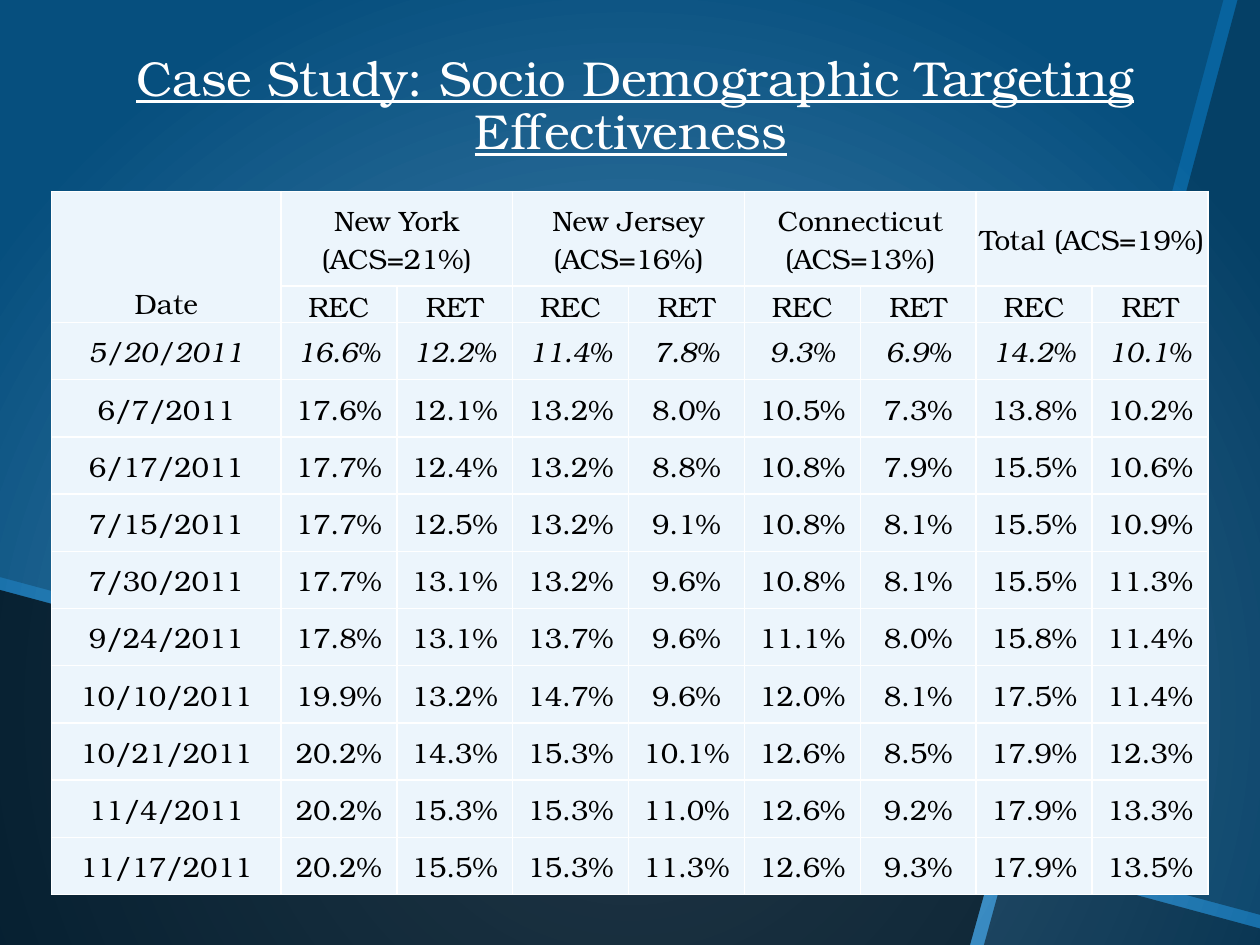
import math
from dataclasses import dataclass

import pptx
import pptx.dml.color
import pptx.enum.text
import pptx.oxml
import pptx.oxml.ns
import pptx.util

Inches = pptx.util.Inches
ALIGN = pptx.enum.text.PP_ALIGN
ANCHOR = pptx.enum.text.MSO_ANCHOR
NAMESPACE = pptx.oxml.ns.nsdecls("a")
FONT = "TeX Gyre Bonum"
COLORS = {
    "glow": "70B6E8",
    "blue": "08639E",
    "shade": "000000",
    "title": "FFFFFF",
    "text": "000000",
    "cell": "ECF5FC",
    "border": "FFFFFF",
}
TILT = 15


@dataclass
class Panel:
    center: tuple[float, float]
    opacity: int
    points: list[tuple[float, float]]


@dataclass
class TitleLine:
    text: str
    left: float
    top: float
    width: float


PANELS = [
    Panel((4.28, 2.14), 20, [(0, 0), (9.71, 0), (7.94, 6.61), (7.9, 6.67), (7.83, 6.68), (0, 4.58)]),
    Panel((3.6, 7.06), 70, [(0, 4.68), (7.8, 6.78), (7.86, 6.83), (7.87, 6.89), (7.7, 7.5), (0, 7.5)]),
    Panel((8.92, 7.44), 50, [(8.04, 6.85), (8.08, 6.85), (10, 7.37), (10, 7.5), (7.81, 7.5), (7.97, 6.92), (8, 6.87)]),
    Panel((9.92, 3.6), 35, [(9.82, 0), (10, 0), (10, 7.26), (8.1, 6.75), (8.05, 6.71), (8.04, 6.64)]),
]
TITLE_LINES = [
    TitleLine("Case Study: Socio Demographic Targeting", 0.33, 0.33, 9.42),
    TitleLine("Effectiveness", 0.38, 0.75, 9.25),
]
REGIONS = ["New York (ACS=21%)", "New Jersey (ACS=16%)", "Connecticut (ACS=13%)", "Total (ACS=19%)"]
RATES = [
    ("5/20/2011", 16.6, 12.2, 11.4, 7.8, 9.3, 6.9, 14.2, 10.1),
    ("6/7/2011", 17.6, 12.1, 13.2, 8.0, 10.5, 7.3, 13.8, 10.2),
    ("6/17/2011", 17.7, 12.4, 13.2, 8.8, 10.8, 7.9, 15.5, 10.6),
    ("7/15/2011", 17.7, 12.5, 13.2, 9.1, 10.8, 8.1, 15.5, 10.9),
    ("7/30/2011", 17.7, 13.1, 13.2, 9.6, 10.8, 8.1, 15.5, 11.3),
    ("9/24/2011", 17.8, 13.1, 13.7, 9.6, 11.1, 8.0, 15.8, 11.4),
    ("10/10/2011", 19.9, 13.2, 14.7, 9.6, 12.0, 8.1, 17.5, 11.4),
    ("10/21/2011", 20.2, 14.3, 15.3, 10.1, 12.6, 8.5, 17.9, 12.3),
    ("11/4/2011", 20.2, 15.3, 15.3, 11.0, 12.6, 9.2, 17.9, 13.3),
    ("11/17/2011", 20.2, 15.5, 15.3, 11.3, 12.6, 9.3, 17.9, 13.5),
]


def rgb(name: str) -> pptx.dml.color.RGBColor:
    return pptx.dml.color.RGBColor.from_string(COLORS[name])


def write_text(frame, text: str, *, size: float, color: str, italic: bool = False, underline: bool = False) -> None:
    paragraph = frame.paragraphs[0]
    paragraph.alignment = ALIGN.CENTER
    run = paragraph.add_run()
    run.text = text
    run.font.name = FONT
    run.font.size = pptx.util.Pt(size)
    run.font.color.rgb = rgb(color)
    run.font.bold = False
    run.font.italic = italic
    run.font.underline = underline


def paint_background(slide) -> None:
    fill = slide.background.fill
    fill.gradient()
    for stop, name, position in zip(fill.gradient_stops, ("glow", "blue"), (0, 1)):
        stop.color.rgb = rgb(name)
        stop.position = position
    line = slide.element.find(".//" + pptx.oxml.ns.qn("a:lin"))
    line.getparent().replace(line, pptx.oxml.parse_xml(
        f'<a:path {NAMESPACE} path="circle"><a:fillToRect l="50000" t="50000" r="50000" b="0"/></a:path>'))


def draw_panel(slide, panel: Panel) -> None:
    cosine, sine = math.cos(math.radians(TILT)), math.sin(math.radians(TILT))
    center_x, center_y = panel.center
    upright = []
    for x, y in panel.points:
        across, down = x - center_x, y - center_y
        upright.append((Inches(center_x + across * cosine + down * sine),
                        Inches(center_y - across * sine + down * cosine)))
    builder = slide.shapes.build_freeform(*upright[0])
    builder.add_line_segments(upright[1:], close=True)
    shape = builder.convert_to_shape()
    shape.rotation = TILT
    shape.shadow.inherit = False
    shape.line.fill.background()
    shape.fill.solid()
    shape.fill.fore_color.rgb = rgb("shade")
    color = shape.fill._xPr.find(".//" + pptx.oxml.ns.qn("a:srgbClr"))
    color.append(pptx.oxml.parse_xml(f'<a:alpha {NAMESPACE} val="{panel.opacity * 1000}"/>'))


def draw_title_line(slide, line: TitleLine) -> None:
    shape = slide.shapes.add_textbox(Inches(line.left), Inches(line.top), Inches(line.width), Inches(0.57))
    shape.text_frame.word_wrap = True
    shape.text_frame.auto_size = pptx.enum.text.MSO_AUTO_SIZE.SHAPE_TO_FIT_TEXT
    write_text(shape.text_frame, line.text, size=28, color="title", underline=True)


def style_cell(cell) -> None:
    properties = cell._tc.get_or_add_tcPr()
    for side in ("lnL", "lnR", "lnT", "lnB"):
        properties.append(pptx.oxml.parse_xml(
            f'<a:{side} {NAMESPACE} w="12700"><a:solidFill><a:srgbClr val="{COLORS["border"]}"/>'
            f'</a:solidFill></a:{side}>'))
    cell.fill.solid()
    cell.fill.fore_color.rgb = rgb("cell")
    cell.margin_left = cell.margin_right = cell.margin_top = Inches(0.01)
    cell.margin_bottom = 0
    cell.vertical_anchor = ANCHOR.MIDDLE


def draw_table(slide) -> None:
    header_heights = [0.75, 0.29]
    height = 5.58
    data_height = (height - sum(header_heights)) / len(RATES)
    heights = header_heights + [data_height] * len(RATES)
    widths = [1.82] + [0.92] * (2 * len(REGIONS))
    table = slide.shapes.add_table(len(heights), len(widths), Inches(0.41), Inches(1.52),
                                   Inches(sum(widths)), Inches(height)).table
    table.first_row = table.horz_banding = False
    for column, width in zip(table.columns, widths):
        column.width = Inches(width)
    for row, row_height in zip(table.rows, heights):
        row.height = Inches(row_height)
    for cell in table.iter_cells():
        style_cell(cell)

    def fill_cell(row: int, column: int, text: str, italic: bool = False) -> None:
        write_text(table.cell(row, column).text_frame, text, size=16, color="text", italic=italic)

    table.cell(0, 0).merge(table.cell(1, 0))
    table.cell(0, 0).vertical_anchor = ANCHOR.BOTTOM
    fill_cell(0, 0, "Date")
    for index, region in enumerate(REGIONS):
        column = 1 + 2 * index
        table.cell(0, column).merge(table.cell(0, column + 1))
        fill_cell(0, column, region)
        fill_cell(1, column, "REC")
        fill_cell(1, column + 1, "RET")
    for row, (date, *rates) in enumerate(RATES, start=2):
        texts = [date] + [f"{rate:.1f}%" for rate in rates]
        for column, text in enumerate(texts):
            fill_cell(row, column, text, italic=row == 2)


def main() -> None:
    presentation = pptx.Presentation()
    presentation.slide_width = Inches(10)
    presentation.slide_height = Inches(7.5)
    slide = presentation.slides.add_slide(presentation.slide_layouts[6])
    paint_background(slide)
    for panel in PANELS:
        draw_panel(slide, panel)
    for line in TITLE_LINES:
        draw_title_line(slide, line)
    draw_table(slide)
    presentation.save("out.pptx")


if __name__ == "__main__":
    main()
